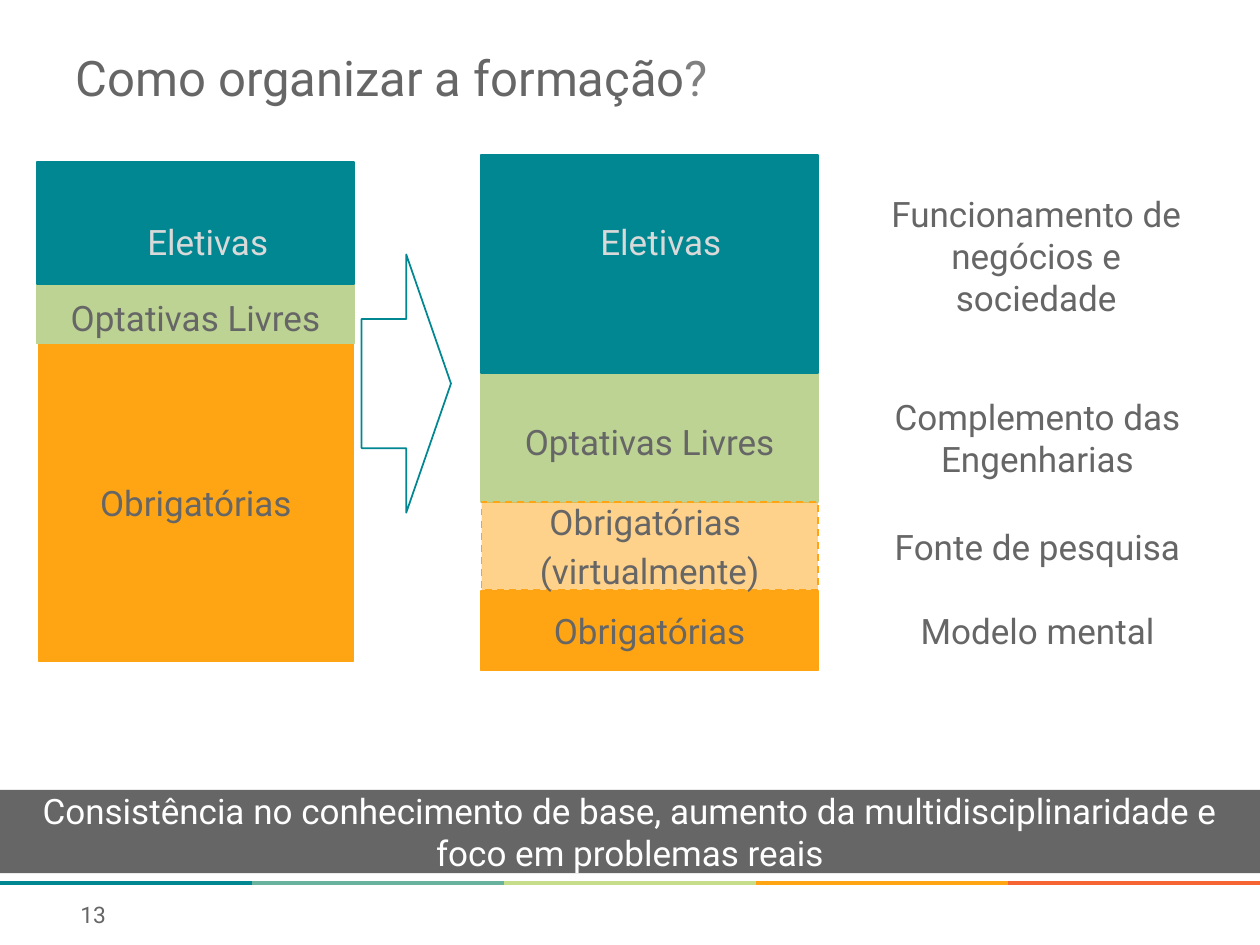
from dataclasses import dataclass
from typing import Optional

from lxml import etree
from pptx import Presentation
from pptx.dml.color import RGBColor
from pptx.enum.dml import MSO_LINE
from pptx.enum.shapes import MSO_CONNECTOR, MSO_SHAPE
from pptx.enum.text import MSO_ANCHOR, PP_ALIGN
from pptx.oxml.ns import qn
from pptx.util import Pt

RECTANGLE = MSO_SHAPE.RECTANGLE
RIGHT_ARROW = MSO_SHAPE.RIGHT_ARROW
STRAIGHT = MSO_CONNECTOR.STRAIGHT
DASH = MSO_LINE.DASH
TOP = MSO_ANCHOR.TOP
MIDDLE = MSO_ANCHOR.MIDDLE
LEFT = PP_ALIGN.LEFT
CENTER = PP_ALIGN.CENTER

TEAL = RGBColor(0x00, 0x87, 0x91)
SEA_GREEN = RGBColor(0x69, 0xB3, 0x9E)
LIME = RGBColor(0xC6, 0xDE, 0x89)
SAGE = RGBColor(0xBD, 0xD3, 0x93)
ORANGE = RGBColor(0xFF, 0xA5, 0x14)
RED = RGBColor(0xF5, 0x64, 0x32)
DARK_GRAY = RGBColor(0x66, 0x66, 0x66)
MID_GRAY = RGBColor(0x80, 0x80, 0x80)
LIGHT_GRAY = RGBColor(0xD9, 0xD9, 0xD9)
WHITE = RGBColor(0xFF, 0xFF, 0xFF)

FONT = "Roboto"
SLIDE_WIDTH = 720
SLIDE_HEIGHT = 540
STRIPE_TOP = 504.72


@dataclass(frozen=True)
class Box:
    left: float
    top: float
    width: float
    height: float


@dataclass(frozen=True)
class Block:
    box: Box
    color: RGBColor
    lines: tuple[str, ...] = ()
    top_inset: float = 3.6
    bottom_inset: float = 3.6
    opacity: Optional[int] = None


@dataclass(frozen=True)
class Label:
    box: Box
    text: str
    color: RGBColor = DARK_GRAY
    size: float = 20
    align: PP_ALIGN = CENTER
    anchor: MSO_ANCHOR = TOP
    side_inset: float = 7.2


BLOCKS = (
    Block(Box(22.3, 196.8, 179.3, 181.2), ORANGE, ("Obrigatórias",)),
    Block(Box(21, 162.4, 181.4, 34), SAGE, ("Optativas Livres",), 7, 3),
    Block(Box(21, 92.6, 181.4, 69.8), TEAL),
    Block(Box(275, 337.7, 192.5, 45.5), ORANGE, ("Obrigatórias",)),
    Block(Box(275, 213.4, 192.5, 73.4), SAGE, ("Optativas Livres",), 7, 3),
    Block(Box(275, 88.6, 192.5, 124.6), TEAL),
    Block(Box(275.2, 287, 192.2, 50.4), ORANGE, ("Obrigatórias ", "(virtualmente)"), opacity=49),
)

LABELS = (
    Label(Box(66.2, 122.4, 105.1, 31.7), "Eletivas", LIGHT_GRAY),
    Label(Box(321.8, 122.4, 111.6, 31.7), "Eletivas", LIGHT_GRAY),
    Label(Box(501.8, 106.6, 180.7, 79.9), "Funcionamento de negócios e sociedade"),
    Label(Box(496.8, 213.4, 192.2, 73.4), "Complemento das Engenharias", anchor=MIDDLE, side_inset=0),
    Label(Box(496.8, 287.3, 192.2, 50.4), "Fonte de pesquisa", anchor=MIDDLE, side_inset=0),
    Label(Box(496.8, 337.7, 192.2, 45.4), "Modelo mental", anchor=MIDDLE, side_inset=0),
    Label(Box(38.9, 510.5, 41, 23.8), "13", size=13, align=LEFT, anchor=MIDDLE),
)

TITLE = Label(Box(36, 23.8, 648, 59), "Como organizar a formação", size=28, align=LEFT)
BANNER = Label(
    Box(0, 451.4, SLIDE_WIDTH, 47.6),
    "Consistência no conhecimento de base, aumento da multidisciplinaridade e foco em problemas reais",
    WHITE,
    anchor=MIDDLE,
)


def frame(box: Box) -> tuple[Pt, Pt, Pt, Pt]:
    return Pt(box.left), Pt(box.top), Pt(box.width), Pt(box.height)


def style_paragraph(paragraph, color: RGBColor, size: float, align: PP_ALIGN) -> None:
    paragraph.alignment = align
    paragraph.font.name = FONT
    paragraph.font.size = Pt(size)
    paragraph.font.color.rgb = color


def set_insets(text_frame, side: float, top: float, bottom: float) -> None:
    text_frame.margin_left = text_frame.margin_right = Pt(side)
    text_frame.margin_top = Pt(top)
    text_frame.margin_bottom = Pt(bottom)
    text_frame.word_wrap = True


def fill_text(shape, label: Label):
    text_frame = shape.text_frame
    set_insets(text_frame, label.side_inset, 3.6, 3.6)
    text_frame.vertical_anchor = label.anchor
    paragraph = text_frame.paragraphs[0]
    paragraph.add_run().text = label.text
    style_paragraph(paragraph, label.color, label.size, label.align)
    return paragraph


def draw_label(slide, label: Label):
    return fill_text(slide.shapes.add_textbox(*frame(label.box)), label)


def draw_block(slide, block: Block) -> None:
    shape = slide.shapes.add_shape(RECTANGLE, *frame(block.box))
    shape.shadow.inherit = False
    shape.fill.solid()
    shape.fill.fore_color.rgb = block.color
    shape.line.color.rgb = block.color
    shape.line.width = Pt(1)
    if block.opacity is not None:
        shape.line.dash_style = DASH
        color = shape.fill._xPr.find(qn("a:solidFill"))[0]
        etree.SubElement(color, qn("a:alpha")).set("val", str(block.opacity * 1000))
    text_frame = shape.text_frame
    set_insets(text_frame, 0, block.top_inset, block.bottom_inset)
    text_frame.vertical_anchor = MIDDLE
    for index, line in enumerate(block.lines):
        paragraph = text_frame.add_paragraph() if index else text_frame.paragraphs[0]
        paragraph.text = line
        if index:
            paragraph.space_before = Pt(4)
        style_paragraph(paragraph, DARK_GRAY, 20, CENTER)


def draw_stripe(slide, colors: tuple[RGBColor, ...]) -> None:
    width = SLIDE_WIDTH / len(colors)
    for index, color in enumerate(colors):
        connector = slide.shapes.add_connector(
            STRAIGHT, Pt(index * width), Pt(STRIPE_TOP), Pt((index + 1) * width), Pt(STRIPE_TOP)
        )
        connector.line.color.rgb = color
        connector.line.width = Pt(2.5)
        etree.SubElement(connector._element.spPr, qn("a:effectLst"))


def draw_banner(slide, label: Label) -> None:
    shape = slide.shapes.add_shape(RECTANGLE, *frame(label.box))
    shape.shadow.inherit = False
    shape.fill.solid()
    shape.fill.fore_color.rgb = DARK_GRAY
    shape.line.fill.background()
    fill_text(shape, label)


def draw_arrow(slide, box: Box) -> None:
    arrow = slide.shapes.add_shape(RIGHT_ARROW, *frame(box))
    arrow.shadow.inherit = False
    arrow.fill.background()
    arrow.line.color.rgb = TEAL
    arrow.line.width = Pt(1)


def main() -> None:
    presentation = Presentation()
    presentation.slide_width = Pt(SLIDE_WIDTH)
    presentation.slide_height = Pt(SLIDE_HEIGHT)
    slide = presentation.slides.add_slide(presentation.slide_layouts[6])
    draw_stripe(slide, (TEAL, SEA_GREEN, LIME, ORANGE, RED))
    question_mark = draw_label(slide, TITLE).add_run()
    question_mark.text = "?"
    question_mark.font.color.rgb = MID_GRAY
    draw_banner(slide, BANNER)
    for block in BLOCKS:
        draw_block(slide, block)
    draw_arrow(slide, Box(206.6, 145.4, 51.1, 147.6))
    for label in LABELS:
        draw_label(slide, label)
    presentation.save("out.pptx")


if __name__ == "__main__":
    main()
